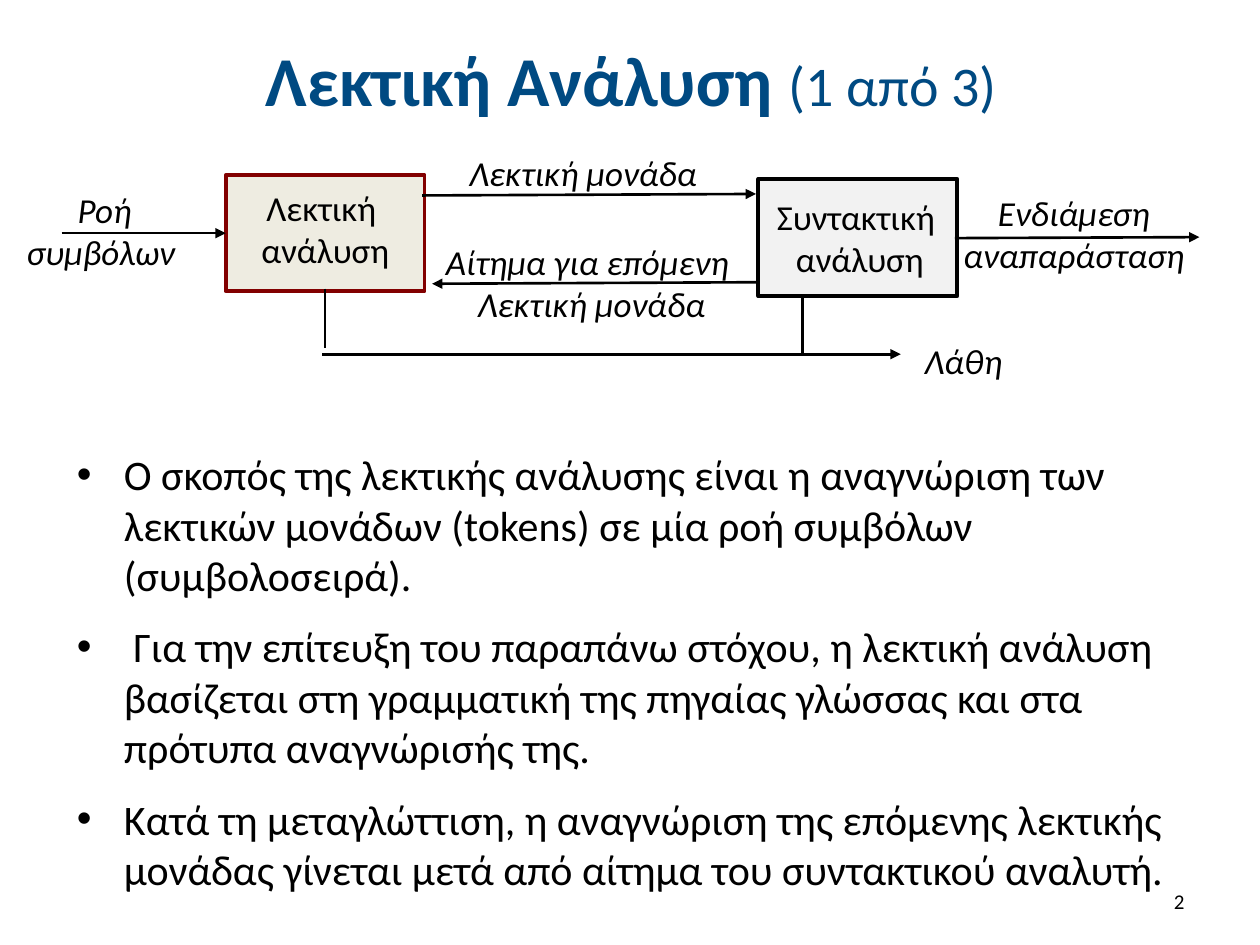
from lxml import etree
from pptx import Presentation
from pptx import util as u
from pptx.dml.color import RGBColor
from pptx.enum import shapes, text
from pptx.oxml.ns import qn

BLUE = RGBColor(0x00, 0x4A, 0x82)
BLACK = RGBColor(0x00, 0x00, 0x00)
MAROON = RGBColor(0x82, 0x00, 0x00)
CREAM = RGBColor(0xEE, 0xEC, 0xE1)
GREY = RGBColor(0xF2, 0xF2, 0xF2)
FONT = "Calibri"
ALIGN = text.PP_ALIGN
POINTS = [
    "Ο σκοπός της λεκτικής ανάλυσης είναι η αναγνώριση των λεκτικών μονάδων "
    "(tokens) σε μία ροή συμβόλων (συμβολοσειρά).",
    " Για την επίτευξη του παραπάνω στόχου, η λεκτική ανάλυση βασίζεται στη "
    "γραμματική της πηγαίας γλώσσας και στα πρότυπα αναγνώρισής της.",
    "Κατά τη μεταγλώττιση, η αναγνώριση της επόμενης λεκτικής μονάδας γίνεται "
    "μετά από αίτημα του συντακτικού αναλυτή.",
]


def style(run, size, color=BLACK, bold=False, italic=False):
    font = run.font
    font.name, font.size = FONT, u.Pt(size)
    font.bold, font.italic = bold, italic
    font.color.rgb = color


def write(slide, box, lines, size, align=ALIGN.CENTER, italic=False, wrap=True):
    area = slide.shapes.add_textbox(*map(u.Cm, box))
    frame = area.text_frame
    frame.text = "\n".join(lines)
    frame.word_wrap = wrap
    for para in frame.paragraphs:
        para.alignment = align
        for run in para.runs:
            style(run, size, italic=italic)
    return frame


def add_title(slide, box):
    title = slide.shapes.title
    title.left, title.top, title.width, title.height = map(u.Cm, box)
    frame = title.text_frame
    frame.vertical_anchor = text.MSO_ANCHOR.MIDDLE
    para = frame.paragraphs[0]
    para.alignment = ALIGN.CENTER
    for words, size, bold in [("Λεκτική Ανάλυση ", 40, True), ("(1 από 3)", 32, False)]:
        run = para.add_run()
        run.text = words
        style(run, size, BLUE, bold)


def add_block(slide, box, fill, edge):
    block = slide.shapes.add_shape(shapes.MSO_SHAPE.RECTANGLE, *map(u.Cm, box))
    block.shadow.inherit = False
    block.fill.solid()
    block.fill.fore_color.rgb = fill
    block.line.color.rgb = edge
    block.line.width = u.Pt(2.25)


def add_line(slide, ends, arrow):
    line = slide.shapes.add_connector(shapes.MSO_CONNECTOR.STRAIGHT, *map(u.Cm, ends))
    line.line.color.rgb = BLACK
    line.line.width = u.Pt(1.5)
    if arrow:
        etree.SubElement(line.line._get_or_add_ln(), qn("a:tailEnd"), type="triangle")
    etree.SubElement(line._element.spPr, qn("a:effectLst"))


def add_diagram(slide, left, top):
    blocks = [
        ((4.55, 0.61, 4.01, 2.34), CREAM, MAROON),
        ((15.29, 0.69, 4.01, 2.36), GREY, BLACK),
    ]
    labels = [
        ((0, 0.76, 4.22, 1.96), ["Ροή συμβόλων "], True, True),
        ((5, 0.71, 3.12, 1.96), ["Λεκτική ", "ανάλυση"], False, False),
        ((19.15, 0.81, 5, 1.96), ["Ενδιάμεση αναπαράσταση"], True, True),
        ((15.39, 0.89, 3.89, 1.96), ["Συντακτική ", "ανάλυση"], False, False),
        ((18.29, 3.79, 2.26, 1.12), ["Λάθη"], True, False),
        ((9.09, 0, 5.33, 1.12), ["Λεκτική μονάδα"], True, True),
        ((8.71, 1.8, 6.43, 1.96), ["Αίτημα για επόμενη ", "Λεκτική μονάδα"], True, False),
    ]
    lines = [
        ((6.55, 2.9, 6.55, 4.09), False),
        ((6.5, 4.22, 18.16, 4.22), True),
        ((16.18, 3.05, 16.18, 4.19), False),
        ((8.51, 1.02, 15.24, 0.99), True),
        ((15.29, 2.77, 8.71, 2.8), True),
        ((19.25, 1.88, 24.18, 1.86), True),
        ((1.24, 1.78, 4.55, 1.78), True),
    ]
    for (x, y, wide, high), fill, edge in blocks:
        add_block(slide, (left + x, top + y, wide, high), fill, edge)
    for (x, y, wide, high), words, italic, wrap in labels:
        frame = write(slide, (left + x, top + y, wide, high), words, 20,
                      italic=italic, wrap=wrap)
        frame.auto_size = text.MSO_AUTO_SIZE.SHAPE_TO_FIT_TEXT
    for (x, y, end, low), arrow in lines:
        add_line(slide, (left + x, top + y, left + end, top + low), arrow)


def add_points(slide, box):
    frame = write(slide, box, POINTS, 24, ALIGN.LEFT)
    for para in frame.paragraphs:
        para.space_before = u.Pt(12)
        props = para._p.get_or_add_pPr()
        indent = u.Cm(0.95)
        props.set("marL", str(indent))
        props.set("indent", str(-indent))
        etree.SubElement(props, qn("a:buFont"), typeface="Arial")
        etree.SubElement(props, qn("a:buChar"), char="•")


def add_number(slide, box):
    frame = write(slide, box, ["2"], 12, ALIGN.RIGHT)
    frame.vertical_anchor = text.MSO_ANCHOR.MIDDLE


def main():
    deck = Presentation()
    deck.slide_width, deck.slide_height = u.Cm(25.4), u.Cm(19.05)
    slide = deck.slides.add_slide(deck.slide_layouts[5])
    add_title(slide, (1.3, 0.33, 22.86, 2.51))
    add_points(slide, (1.3, 8.92, 22.86, 9.02))
    add_number(slide, (18.21, 17.65, 5.92, 1.02))
    add_diagram(slide, 0, 2.92)
    deck.save("out.pptx")


if __name__ == "__main__":
    main()
